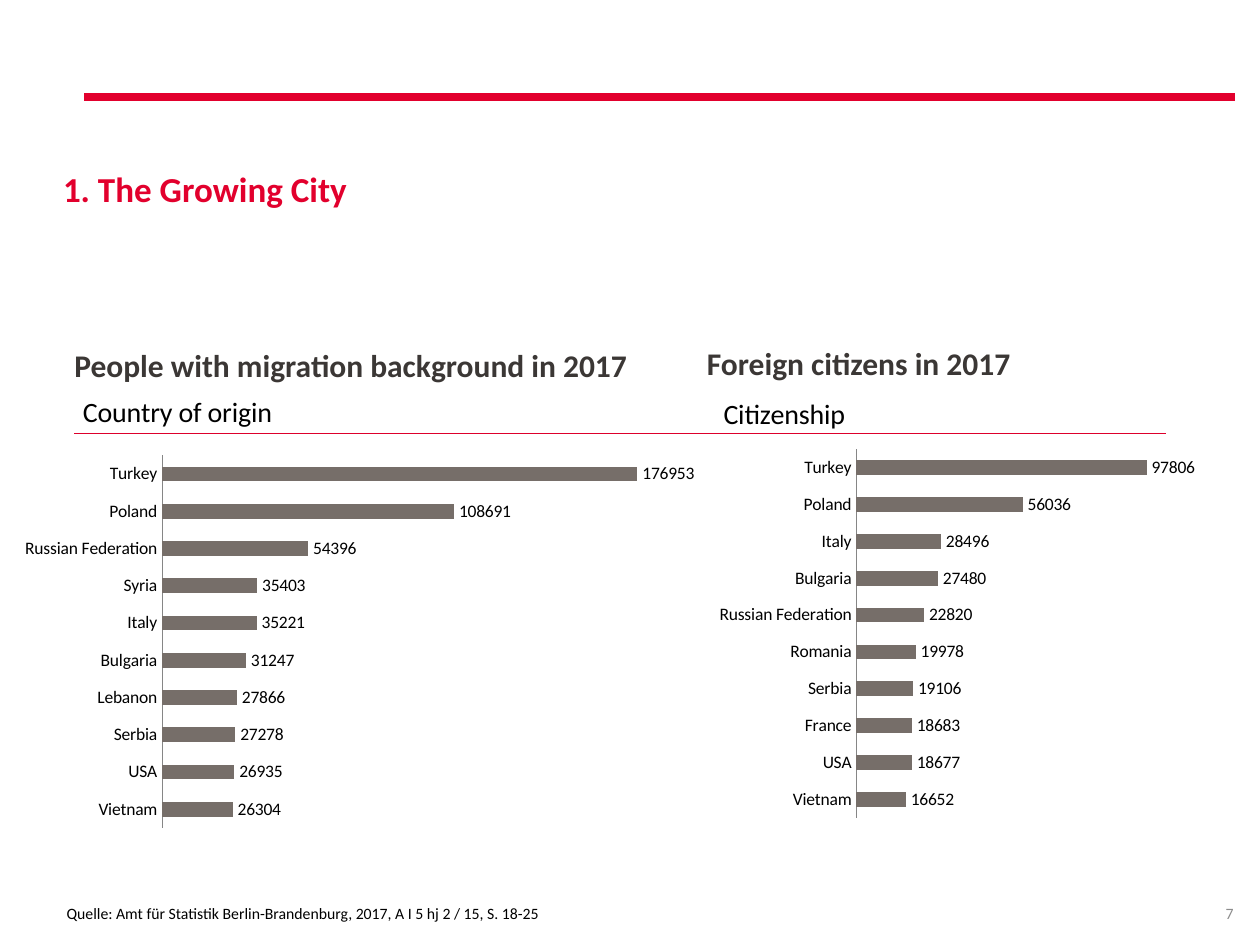
"""Builds a slide with two bar charts on migration background and citizenship in Berlin."""
from lxml import etree
from pptx import Presentation
from pptx.chart.data import CategoryChartData
from pptx.dml.color import RGBColor
from pptx.enum.chart import XL_CHART_TYPE as CT, XL_LABEL_POSITION as LP, XL_TICK_MARK as TM
from pptx.enum.shapes import MSO_CONNECTOR as CONN
from pptx.enum.text import MSO_ANCHOR as ANCHOR, PP_ALIGN as ALIGN
from pptx.oxml.ns import qn
from pptx.util import Inches, Pt

COLORS = {"red": "E2002D", "rule": "DD002C", "dark": "3B3735", "bar": "766E69",
          "axis": "868686", "number": "8C8C8C", "black": "000000"}


def style_text(sp, text, box, size, color, bold=False, align=ALIGN.LEFT,
               anchor=ANCHOR.TOP, insets=(0, 0, 0, 0)):
    sp.left, sp.top, sp.width, sp.height = [Inches(v) for v in box]
    tf = sp.text_frame
    tf.text = text
    tf.word_wrap = True
    tf.vertical_anchor = anchor
    tf.margin_left, tf.margin_top, tf.margin_right, tf.margin_bottom = [Inches(v) for v in insets]
    p = tf.paragraphs[0]
    p.alignment = align
    p.space_before = Pt(0)
    font = p.runs[0].font
    font.name, font.size, font.bold = "Calibri", Pt(size), bold
    font.color.rgb = RGBColor.from_string(COLORS[color])


def set_layout(parent, **values):
    for old in parent.findall(qn("c:layout")):
        parent.remove(old)
    layout = etree.Element(qn("c:layout"))
    manual = etree.SubElement(layout, qn("c:manualLayout"))
    for name, value in values.items():
        etree.SubElement(manual, qn(f"c:{name}")).set("val", str(value))
    before = parent.find(qn("c:tx"))
    parent.insert(0 if before is None else 1, layout)


prs = Presentation()
prs.slide_width, prs.slide_height = Inches(10), Inches(7.5)
s = prs.slides.add_slide(prs.slide_layouts[4])
title, left_head, left_body, right_head, right_body = s.placeholders
for sp in (left_body, right_body):
    sp.element.getparent().remove(sp.element)

style_text(title, "1. The Growing City", (0.5, 1.33, 9, 0.59), 20, "red", bold=True)
style_text(left_head, "People with migration background in 2017", (0.59, 2.18, 4.86, 0.87),
           18, "dark", bold=True, anchor=ANCHOR.BOTTOM)
style_text(right_head, "Foreign citizens in 2017", (5.24, 2.33, 3.23, 0.7),
           18, "dark", bold=True, anchor=ANCHOR.BOTTOM, insets=(0.37, 0, 0, 0))
number = s.shapes.add_textbox(0, 0, 0, 0)
style_text(number, "7", (9.13, 7.17, 0.66, 0.2), 9, "number", align=ALIGN.RIGHT)
source = s.shapes.add_textbox(0, 0, 0, 0)
style_text(source, "Quelle: Amt für Statistik Berlin-Brandenburg, 2017, A I 5 hj 2 / 15, S. 18-25",
           (0.43, 7.12, 7.69, 0.25), 9, "black", insets=(0.1, 0.05, 0.1, 0.05))

origins = {"Vietnam": 26304, "USA": 26935, "Serbia": 27278, "Lebanon": 27866,
           "Bulgaria": 31247, "Italy": 35221, "Syria": 35403,
           "Russian Federation": 54396, "Poland": 108691, "Turkey": 176953}
citizens = {"Vietnam": 16652, "USA": 18677, "France": 18683, "Serbia": 19106,
            "Romania": 19978, "Russian Federation": 22820, "Bulgaria": 27480,
            "Italy": 28496, "Poland": 56036, "Turkey": 97806}
charts = [
    ("Country of origin", origins, (-0.01, 3.04, 5.71, 3.66), 200000, 0,
     (0.11, 0.01), (0.227, 0.157, 0.747, 0.808)),
    ("Citizenship", citizens, (5.24, 3.01, 4.62, 4.24), 120000, -25,
     (0.1, 0.02), (0.337, 0.131, 0.612, 0.69)),
]
for name, values, box, maximum, overlap, title_at, plot_box in charts:
    data = CategoryChartData()
    data.categories = list(values)
    data.add_series("Series 1", list(values.values()))
    chart = s.shapes.add_chart(CT.BAR_CLUSTERED, *[Inches(v) for v in box], data).chart
    chart.has_legend = False
    chart.font.name, chart.font.size = "Calibri", Pt(18)
    chart.font.color.rgb = RGBColor.from_string(COLORS["black"])

    chart.has_title = True
    chart.chart_title.text_frame.text = name
    font = chart.chart_title.text_frame.paragraphs[0].runs[0].font
    font.name, font.size, font.bold = "Calibri", Pt(16), False
    chart.chart_title.include_in_layout = False
    x, y = title_at
    set_layout(chart.chart_title._element, xMode="edge", yMode="edge", x=x, y=y)
    x, y, w, h = plot_box
    set_layout(chart._chartSpace.chart.plotArea, layoutTarget="inner",
               xMode="edge", yMode="edge", x=x, y=y, w=w, h=h)

    axis = chart.category_axis
    axis.major_tick_mark = axis.minor_tick_mark = TM.NONE
    axis.tick_labels.font.size = Pt(10)
    axis.format.line.color.rgb = RGBColor.from_string(COLORS["axis"])
    axis.format.line.width = Pt(0.5)
    chart.value_axis.visible = False
    chart.value_axis.has_major_gridlines = False
    chart.value_axis.minimum_scale = 0
    chart.value_axis.maximum_scale = maximum

    plot = chart.plots[0]
    plot.vary_by_categories = False
    plot.gap_width, plot.overlap = 150, overlap
    fill = plot.series[0].format.fill
    fill.solid()
    fill.fore_color.rgb = RGBColor.from_string(COLORS["bar"])
    plot.has_data_labels = True
    labels = plot.data_labels
    labels.show_value = True
    labels.position = LP.OUTSIDE_END
    labels.font.size = Pt(10)

rules = [(0.59, 9.25, 3.44, "rule", 0.75), (0.67, 9.8, 0.77, "red", 4.75)]
for x1, x2, y, color, width in rules:
    line = s.shapes.add_connector(CONN.STRAIGHT, Inches(x1), Inches(y), Inches(x2), Inches(y))
    line.line.color.rgb = RGBColor.from_string(COLORS[color])
    line.line.width = Pt(width)
    etree.SubElement(line.element.spPr, qn("a:effectLst"))

prs.save("out.pptx")
